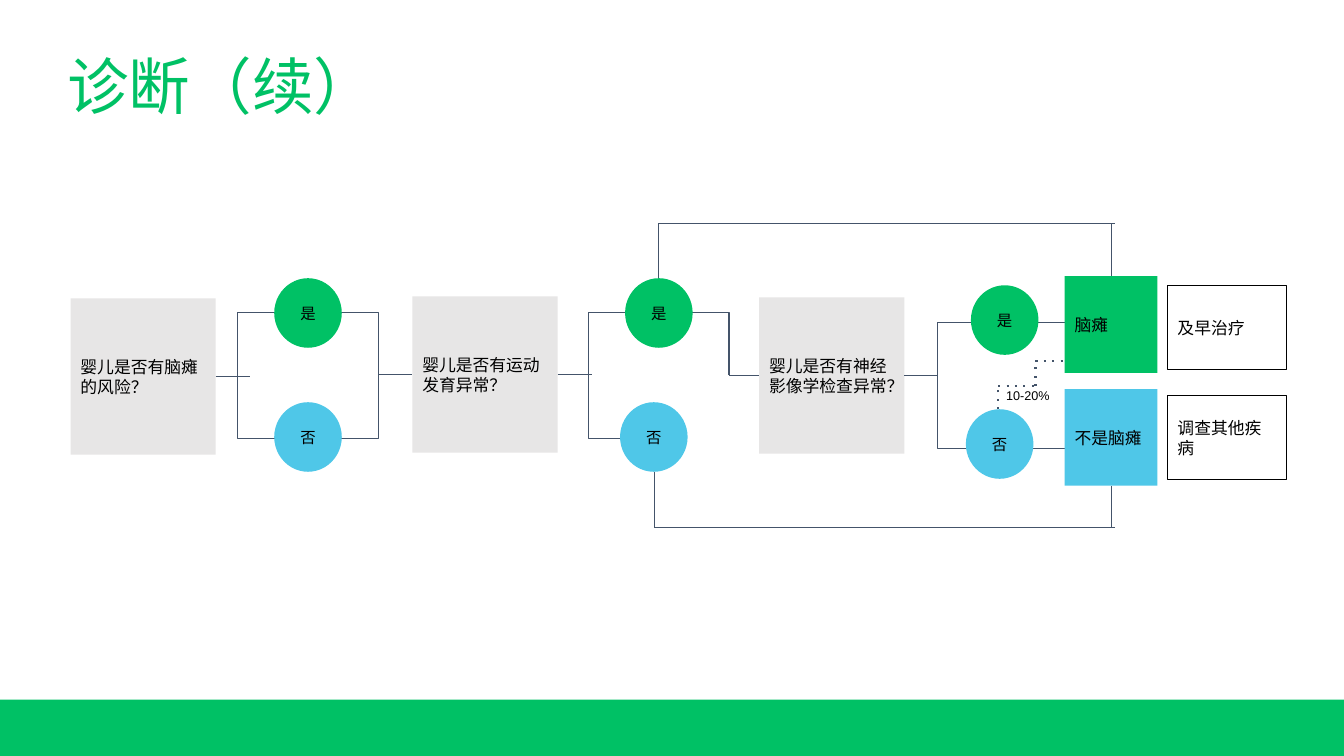
import itertools
import pptx
import pptx.dml.color
import pptx.enum.dml
import pptx.enum.shapes
import pptx.enum.text
import pptx.oxml
import pptx.oxml.ns
import pptx.util

Inches = pptx.util.Inches
Pt = pptx.util.Pt
RGB = pptx.dml.color.RGBColor
SHAPE = pptx.enum.shapes.MSO_SHAPE
ALIGN = pptx.enum.text.PP_ALIGN

GREEN = RGB(0x00, 0xC1, 0x65)
BLUE = RGB(0x4F, 0xC7, 0xE8)
GRAY = RGB(0xE7, 0xE6, 0xE6)
SLATE = RGB(0x44, 0x54, 0x6A)
WHITE = RGB(0xFF, 0xFF, 0xFF)
BLACK = RGB(0x00, 0x00, 0x00)


def write(shape, text, size, color=BLACK, align=ALIGN.LEFT, pad=0.1):
    """Fill a shape with one vertically centred paragraph."""
    frame = shape.text_frame
    frame.word_wrap = True
    frame.vertical_anchor = pptx.enum.text.MSO_ANCHOR.MIDDLE
    frame.margin_left = frame.margin_right = Inches(0.1)
    frame.margin_top = frame.margin_bottom = Inches(pad)
    para = frame.paragraphs[0]
    para.text = text
    para.alignment = align
    para.font.name = "Arial"
    para.font.size = Pt(size)
    para.font.color.rgb = color
    return para


def paint(shape, fill=None, line=None):
    shape.shadow.inherit = False
    if fill is None:
        shape.fill.background()
    else:
        shape.fill.solid()
        shape.fill.fore_color.rgb = fill
    if line is None:
        shape.line.fill.background()
    else:
        shape.line.color.rgb = line
        shape.line.width = Pt(0.75)


def block(slide, box, fill=None, line=None, kind=SHAPE.RECTANGLE):
    shape = slide.shapes.add_shape(kind, *map(Inches, box))
    paint(shape, fill, line)
    return shape


def label(slide, box, text, size, **style):
    shape = slide.shapes.add_textbox(*map(Inches, box))
    return write(shape, text, size, **style)


def wire(slide, start, end, dotted=False):
    line = slide.shapes.add_connector(
        pptx.enum.shapes.MSO_CONNECTOR.STRAIGHT, *map(Inches, start + end))
    line.line.color.rgb = SLATE
    line.line.width = Pt(1.5 if dotted else 0.75)
    props = line._element.spPr
    if dotted:
        line.line.dash_style = pptx.enum.dml.MSO_LINE.ROUND_DOT
        # Wider gaps than the preset style gives
        props.find(".//" + pptx.oxml.ns.qn("a:prstDash")).set("val", "dot")
    props.append(pptx.oxml.parse_xml(
        '<a:effectLst xmlns:a="http://schemas.openxmlformats.org/drawingml/2006/main"/>'))
    return line


def ask(slide, left, top, text, out, into=None):
    """Question box with its wire out and, if given, the wire into it."""
    width, height = 1.44, 1.55
    box = block(slide, (left, top, width, height), GRAY)
    write(box, text, 12)
    mid = top + height / 2
    wire(slide, (left + width, mid), (out, mid)).begin_connect(box, 3)
    if into:
        wire(slide, (into, mid), (left, mid)).end_connect(box, 1)


def trace(slide, points):
    """Open bracket through the points, on a grid of 0.01 inch."""
    grid = [(x * 100, y * 100) for x, y in points]
    build = slide.shapes.build_freeform(*grid[0], scale=Inches(0.01))
    build.add_line_segments(grid[1:], close=False)
    paint(build.convert_to_shape(), line=SLATE)


def reply(slide, yes, no):
    """Yes and no circles at the two left-top corners."""
    for spot, text, fill in ((yes, "是", GREEN), (no, "否", BLUE)):
        dot = block(slide, spot + (0.67, 0.69), fill, kind=SHAPE.OVAL)
        write(dot, text, 11, align=ALIGN.CENTER)


def result(slide, left, top, text, fill, step, high):
    """Outcome box with the next step beside it."""
    box = block(slide, (left, top, 0.92, 0.96), fill)
    write(box, text, 12)
    note = block(slide, (left + 1.02, high, 1.18, 0.84), WHITE, BLACK)
    write(note, step, 12)
    return box


def bypass(slide, left, start, level, box, side):
    """Wire from a circle around the third question to an outcome box."""
    right = 11.02
    wire(slide, (left, start), (left, level))
    wire(slide, (left, level), (right + 0.04, level))
    wire(slide, (right, level), (right, level)).end_connect(box, side)


def flow(slide, left, top):
    """Decision flow; left and top are those of the first question."""
    def at(x, y):
        return left + x, top + y

    ask(slide, *at(0, 0), "婴儿是否有脑瘫的风险？", left + 1.78)
    block(slide, at(1.66, 0.14) + (1.39, 1.25), line=SLATE)
    reply(slide, at(2.02, -0.2), at(2.02, 1.03))

    ask(slide, *at(3.39, -0.02), "婴儿是否有运动发育异常？", left + 5.17, left + 3.05)
    trace(slide, [at(6.53, 0.76), at(6.53, 0.14), at(5.14, 0.14),
                  at(5.14, 1.39), at(5.6, 1.39)])
    reply(slide, at(5.5, -0.2), at(5.45, 1.03))

    ask(slide, *at(6.83, -0.01), "婴儿是否有神经影像学检查异常？", left + 8.6, left + 6.53)
    trace(slide, [at(9.86, 0.24), at(8.6, 0.24), at(8.6, 1.49), at(9.86, 1.49)])
    reply(slide, at(8.93, -0.13), at(8.88, 1.1))

    palsy = result(slide, *at(9.86, -0.22), "脑瘫", GREEN, "及早治疗", top - 0.13)
    other = result(slide, *at(9.86, 0.9), "不是脑瘫", BLUE, "调查其他疾病", top + 0.96)
    bypass(slide, left + 5.83, top - 0.2, top - 0.74, palsy, 0)
    bypass(slide, left + 5.79, top + 1.72, top + 2.27, other, 2)

    steps = [at(9.2, 1.1), at(9.2, 0.87), at(9.57, 0.87), at(9.57, 0.62), at(9.86, 0.62)]
    for start, end in itertools.pairwise(steps):
        wire(slide, start, end, dotted=True)
    label(slide, at(9.18, 0.85) + (0.91, 0.23), "10-20%", 9)


def main():
    deck = pptx.Presentation()
    deck.slide_width, deck.slide_height = Inches(13.33), Inches(7.5)
    slide = deck.slides.add_slide(deck.slide_layouts[6])
    block(slide, (0, 6.94, 13.33, 0.56), GREEN)
    title = label(slide, (0.57, 0.5, 5.47, 0.78), "诊断（续）", 44, color=GREEN, pad=0.05)
    title.line_spacing = 0.9
    flow(slide, 0.7, 2.96)
    deck.save("out.pptx")


if __name__ == "__main__":
    main()
